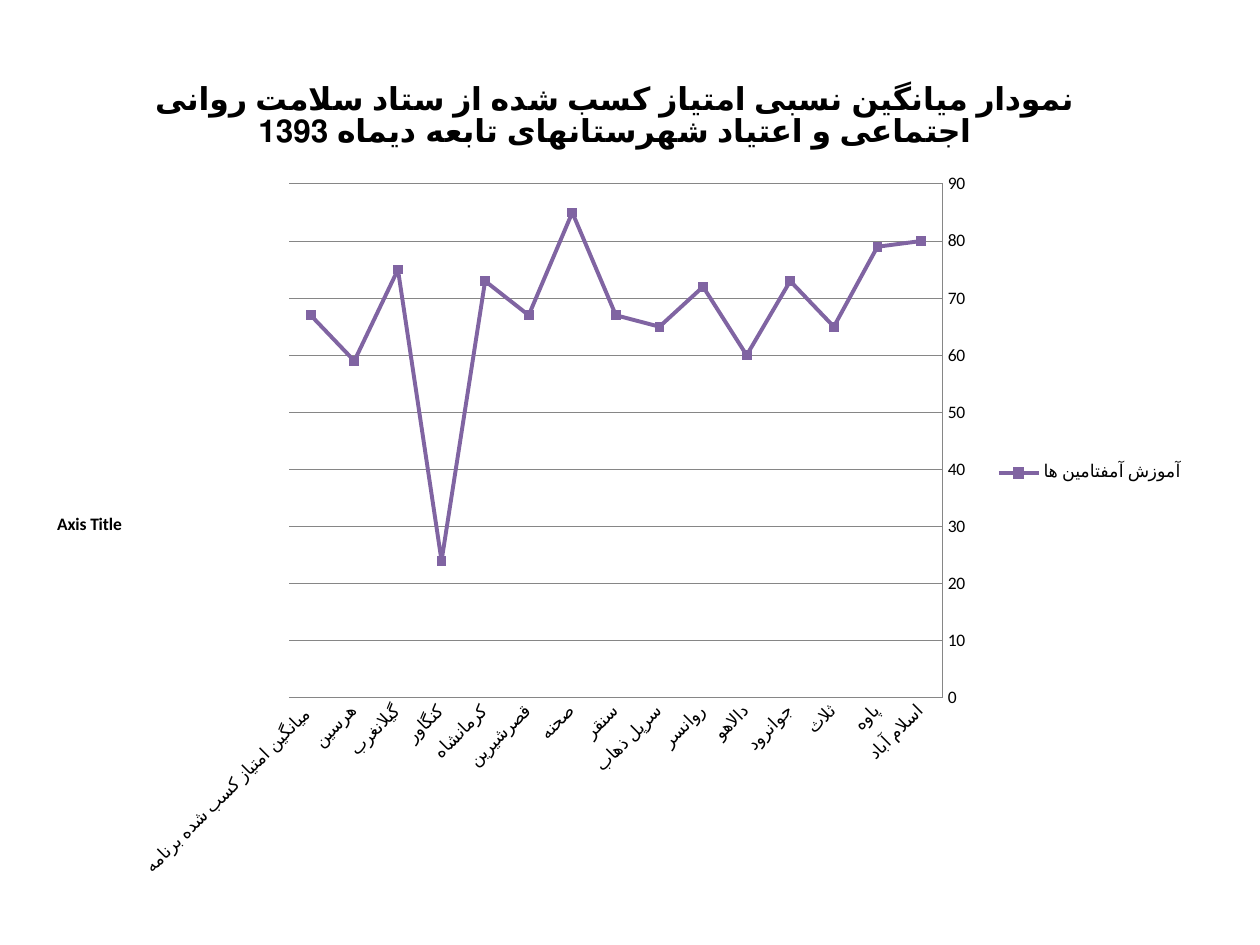
"""Build a slide with a right-to-left line chart of county scores."""
from dataclasses import dataclass

from lxml.etree import SubElement
from pptx import Presentation
from pptx.chart.data import CategoryChartData
from pptx.dml.color import RGBColor
from pptx.enum.chart import XL_CHART_TYPE, XL_LEGEND_POSITION, XL_MARKER_STYLE, XL_TICK_MARK
from pptx.oxml.ns import qn
from pptx.util import Emu, Pt

PX = 914400 // 126


@dataclass(frozen=True)
class Theme:
    """Colours, font and type sizes of the slide."""
    text: RGBColor = RGBColor(0, 0, 0)
    series: RGBColor = RGBColor(0x80, 0x64, 0xA2)
    grid: RGBColor = RGBColor(0x86, 0x86, 0x86)
    font: str = "Calibri"
    body: Pt = Pt(10)
    title: Pt = Pt(18)


@dataclass(frozen=True)
class Box:
    """A rectangle in px."""
    left: int
    top: int
    width: int = 0
    height: int = 0


THEME = Theme()
PAGE = Box(0, 0, 1260, 945)
CHART = Box(32, 53, 1166, 840)
PLOT = Box(289, 184, 654, 514)
LEGEND = Box(994, 456, 192, 34)
AXIS_TITLE = Box(54, 510)
TITLE = "نمودار میانگین نسبی امتیاز کسب شده از ستاد سلامت روانی اجتماعی و اعتیاد شهرستانهای تابعه دیماه 1393"
SERIES = "آموزش آمفتامین ها"
SCORES = {
    "اسلام آباد": 80, "پاوه": 79, "ثلاث": 65, "جوانرود": 73, "دالاهو": 60,
    "روانسر": 72, "سرپل ذهاب": 65, "سنقر": 67, "صحنه": 85, "قصرشیرین": 67,
    "کرمانشاه": 73, "کنگاور": 24, "گیلانغرب": 75, "هرسین": 59,
    "میانگین امتیاز کسب شده برنامه ": 67,
}


def apply(target, formats: dict) -> None:
    """Set each named attribute on the target."""
    for name, value in formats.items():
        setattr(target, name, value)


def style_line(line, color: RGBColor, width: Pt) -> None:
    """Give a line its colour and width."""
    line.color.rgb = color
    line.width = width


def place(element, box: Box, index: int, inner: bool = False) -> None:
    """Fix a chart part at a box, as fractions of the chart."""
    layout = element.find(qn("c:layout"))
    if layout is None:
        layout = element.makeelement(qn("c:layout"), {})
        element.insert(index, layout)
    for child in list(layout):
        layout.remove(child)
    manual = SubElement(layout, qn("c:manualLayout"))
    values = {"layoutTarget": "inner"} if inner else {}
    values |= {"xMode": "edge", "yMode": "edge",
               "x": round((box.left - CHART.left) / CHART.width, 4),
               "y": round((box.top - CHART.top) / CHART.height, 4)}
    if box.width:
        values |= {"w": round(box.width / CHART.width, 4),
                   "h": round(box.height / CHART.height, 4)}
    for name, value in values.items():
        SubElement(manual, qn(f"c:{name}")).set("val", str(value))


def write_title(frame, text: str, size: Pt) -> None:
    """Write a bold chart or axis title."""
    para = frame.paragraphs[0]
    span = para.add_run()
    span.text = text
    apply(span.font, {"size": size, "bold": True, "name": THEME.font})
    span.font.color.rgb = THEME.text


def rotate(element, angle: int) -> None:
    """Turn the text of a chart part by an angle in degrees."""
    body = element.find(".//" + qn("a:bodyPr"))
    body.set("rot", str(angle * 60000))
    body.set("vert", "horz")


def style_axes(chart) -> None:
    """Format both axes and the value axis title."""
    category, value = chart.category_axis, chart.value_axis
    for axis in (category, value):
        apply(axis, {"major_tick_mark": XL_TICK_MARK.NONE, "minor_tick_mark": XL_TICK_MARK.NONE})
        style_line(axis.format.line, THEME.grid, Pt(0.5))
        axis.tick_labels.font.size = THEME.body
    apply(category, {"reverse_order": True, "has_major_gridlines": False})
    rotate(category._element.find(qn("c:txPr")), -45)
    apply(value, {"minimum_scale": 0, "maximum_scale": 90, "major_unit": 10,
                  "has_major_gridlines": True, "has_title": True})
    style_line(value.major_gridlines.format.line, THEME.grid, Pt(0.5))
    write_title(value.axis_title.text_frame, "Axis Title", THEME.body)
    title = value.axis_title._element
    rotate(title, 0)
    place(title, AXIS_TITLE, 1)


def style_series(series) -> None:
    """Format the line and its square markers."""
    series.smooth = False
    style_line(series.format.line, THEME.series, Pt(2.25))
    apply(series.marker, {"style": XL_MARKER_STYLE.SQUARE, "size": 5})
    series.marker.format.fill.solid()
    series.marker.format.fill.fore_color.rgb = THEME.series
    style_line(series.marker.format.line, THEME.series, Pt(0.75))


def add_score_chart(page) -> None:
    """Add the line chart of scores."""
    data = CategoryChartData()
    data.categories = list(SCORES)
    data.add_series(SERIES, list(SCORES.values()))
    bounds = [Emu(side * PX) for side in (CHART.left, CHART.top, CHART.width, CHART.height)]
    chart = page.shapes.add_chart(XL_CHART_TYPE.LINE_MARKERS, *bounds, data).chart
    apply(chart.font, {"size": THEME.body, "name": THEME.font})
    chart.font.color.rgb = THEME.text
    apply(chart, {"has_title": True, "has_legend": True})
    write_title(chart.chart_title.text_frame, TITLE, THEME.title)
    chart.chart_title.text_frame.paragraphs[0]._p.get_or_add_pPr().set("rtl", "1")
    apply(chart.legend, {"position": XL_LEGEND_POSITION.RIGHT, "include_in_layout": False})
    place(chart.legend._element, LEGEND, 1)
    chart.plots[0].vary_by_categories = False
    style_axes(chart)
    style_series(chart.plots[0].series[0])
    place(chart._chartSpace.find(".//" + qn("c:plotArea")), PLOT, 0, inner=True)


def main() -> None:
    """Build and save the deck."""
    deck = Presentation()
    apply(deck, {"slide_width": Emu(PAGE.width * PX), "slide_height": Emu(PAGE.height * PX)})
    add_score_chart(deck.slides.add_slide(deck.slide_layouts[6]))
    deck.save("out.pptx")


if __name__ == "__main__":
    main()
